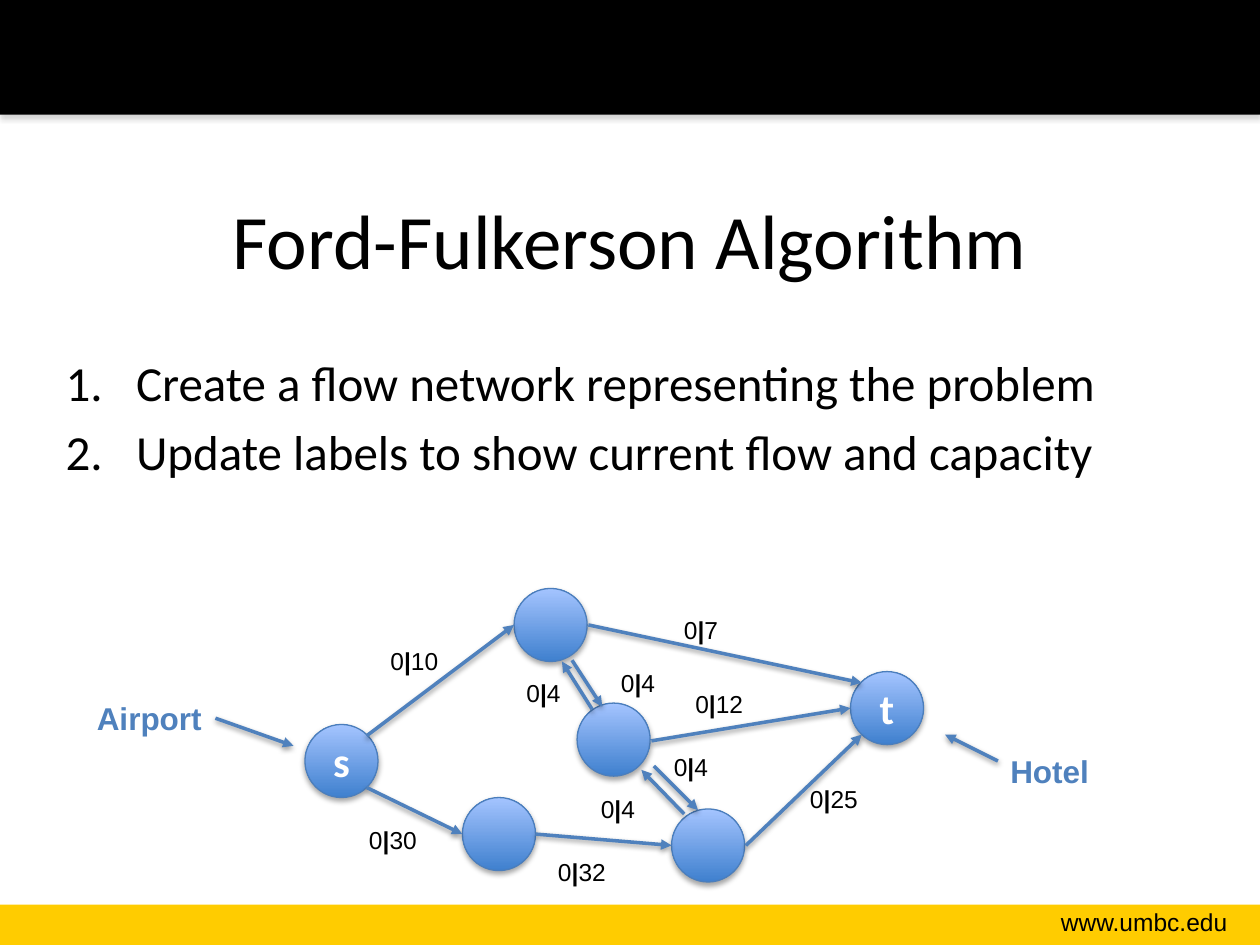
from lxml.etree import SubElement
from pptx import Presentation
from pptx.dml.color import RGBColor
from pptx.enum.shapes import MSO_CONNECTOR as CONNECTOR, MSO_SHAPE as SHAPE
from pptx.enum.text import MSO_ANCHOR as ANCHOR, MSO_AUTO_SIZE as AUTO_SIZE, PP_ALIGN as ALIGN
from pptx.oxml.ns import qn
from pptx.util import Inches, Pt

BLUE = "4F81BD"
NODE_SIZE = 0.58


def color(hex_code):
    return RGBColor.from_string(hex_code)


def add_shadow(shape, hex_code, opacity, distance):
    effects = SubElement(shape._element.spPr, qn("a:effectLst"))
    shadow = SubElement(effects, qn("a:outerShdw"), blurRad=str(Pt(3.1)), dist=str(Pt(distance)),
                        dir="5400000", rotWithShape="0")
    shade = SubElement(shadow, qn("a:srgbClr"), val=hex_code)
    SubElement(shade, qn("a:alpha"), val=str(opacity * 1000))


presentation = Presentation()
presentation.slide_width = Inches(10)
presentation.slide_height = Inches(7.5)
slide = presentation.slides.add_slide(presentation.slide_layouts[1])
shapes = slide.shapes

# Title
title = shapes.title
title.left, title.top, title.width, title.height = map(Inches, (0.5, 1.27, 9, 1.25))
title.text_frame.text = "Ford-Fulkerson Algorithm"
title.text_frame.vertical_anchor = ANCHOR.MIDDLE
paragraph = title.text_frame.paragraphs[0]
paragraph.alignment = ALIGN.CENTER
paragraph.font.name = "Calibri"
paragraph.font.size = Pt(44)
paragraph.font.color.rgb = color("000000")

# Numbered steps
body = slide.placeholders[1]
body.left, body.top, body.width, body.height = map(Inches, (0.42, 2.75, 9, 1.5))
body.text_frame.text = ("Create a flow network representing the problem\n"
                        "Update labels to show current flow and capacity")
body.text_frame.auto_size = AUTO_SIZE.NONE
for index, paragraph in enumerate(body.text_frame.paragraphs):
    properties = paragraph._p.get_or_add_pPr()
    properties.set("marL", str(Inches(0.56)))
    properties.set("indent", str(Inches(-0.56)))
    SubElement(properties, qn("a:buFont"), typeface="+mj-lt")
    SubElement(properties, qn("a:buAutoNum"), type="arabicPeriod")
    paragraph.space_before = Pt(5.6 * index)
    paragraph.font.name = "Calibri"
    paragraph.font.size = Pt(28)
    paragraph.font.color.rgb = color("000000")

# Top and bottom bands
for top, height, fill in [(7.18, 0.32, "FFCC00"), (0, 0.91, "000000")]:
    band = shapes.add_shape(SHAPE.RECTANGLE, 0, Inches(top), Inches(10), Inches(height))
    band.fill.solid()
    band.fill.fore_color.rgb = color(fill)
    band.line.fill.background()
    if top:
        band.shadow.inherit = False
    else:
        add_shadow(band, "808080", 35, 1.8)

# Network nodes
nodes = [(2.42, 5.75, "s"), (4.08, 4.67, ""), (3.67, 6.33, ""),
         (6.75, 5.33, "t"), (5.33, 6.42, ""), (4.58, 5.58, "")]
for left, top, name in nodes:
    node = shapes.add_shape(SHAPE.OVAL, Inches(left), Inches(top), Inches(NODE_SIZE), Inches(NODE_SIZE))
    node.fill.gradient()
    node.fill.gradient_angle = 90
    for stop, shade in zip(node.fill.gradient_stops, ("3F80CE", "A4C4FF")):
        stop.color.rgb = color(shade)
    node.line.color.rgb = color("4B7EBC")
    node.line.width = Pt(0.75)
    add_shadow(node, "000000", 35, 1.8)
    if name:
        node.text_frame.text = name
        node.text_frame.vertical_anchor = ANCHOR.MIDDLE
        paragraph = node.text_frame.paragraphs[0]
        paragraph.alignment = ALIGN.CENTER
        paragraph.font.name = "Calibri"
        paragraph.font.size = Pt(24)
        paragraph.font.bold = True
        paragraph.font.color.rgb = color("FFFFFF")

# Edges and pointers, each from start to arrowhead
arrows = [
    (2.91, 5.84, 4.08, 4.96), (2.91, 6.25, 3.67, 6.62), (4.67, 4.96, 6.84, 5.42),
    (4.25, 6.62, 5.33, 6.71), (5.92, 6.71, 6.84, 5.83), (5.17, 5.88, 6.75, 5.62),
    (4.54, 5.24, 4.78, 5.61), (4.7, 5.63, 4.46, 5.25),
    (5.19, 6.08, 5.54, 6.43), (5.43, 6.46, 5.09, 6.11),
    (1.71, 5.7, 2.33, 5.92), (7.92, 6.04, 7.5, 5.83),
]
for ends in arrows:
    arrow = shapes.add_connector(CONNECTOR.STRAIGHT, *map(Inches, ends))
    arrow.line.color.rgb = color(BLUE)
    arrow.line.width = Pt(2)
    SubElement(arrow.line._get_or_add_ln(), qn("a:tailEnd"), type="triangle")
    add_shadow(arrow, "000000", 38, 1.6)

# Flow labels: current flow | capacity
flows = [(2.83, 6.5, "30"), (3, 5.08, "10"), (4.08, 5.33, "4"), (4.33, 6.75, "32"),
         (6.33, 6.17, "25"), (5.33, 4.83, "7"), (4.67, 6.25, "4"),
         (5.42, 5.42, "12"), (5.25, 5.92, "4"), (4.83, 5.25, "4")]
for left, top, capacity in flows:
    width = 0.36 + 0.11 * len(capacity)
    label = shapes.add_textbox(Inches(left), Inches(top), Inches(width), Inches(0.34))
    label.text_frame.word_wrap = False
    paragraph = label.text_frame.paragraphs[0]
    for text in ("0", "|", capacity):
        run = paragraph.add_run()
        run.text = text
        run.font.bold = text == "|"
    paragraph.font.name = "Arial"
    paragraph.font.size = Pt(14)
    paragraph.font.color.rgb = color("000000")

# Place names and web address
captions = [
    ("Airport", 0.67, 5.5, 1.04, 0.4, 18, BLUE, True, ALIGN.LEFT),
    ("Hotel", 7.92, 5.92, 0.83, 0.4, 18, BLUE, True, ALIGN.LEFT),
    ("www.umbc.edu", 7.85, 7.15, 1.99, 0.34, 14, "000000", False, ALIGN.RIGHT),
]
for text, left, top, width, height, size, ink, bold, alignment in captions:
    caption = shapes.add_textbox(Inches(left), Inches(top), Inches(width), Inches(height))
    caption.text_frame.word_wrap = alignment == ALIGN.RIGHT
    caption.text_frame.text = text
    paragraph = caption.text_frame.paragraphs[0]
    paragraph.alignment = alignment
    paragraph.font.name = "Arial"
    paragraph.font.size = Pt(size)
    paragraph.font.bold = bold
    paragraph.font.color.rgb = color(ink)

presentation.save("out.pptx")
